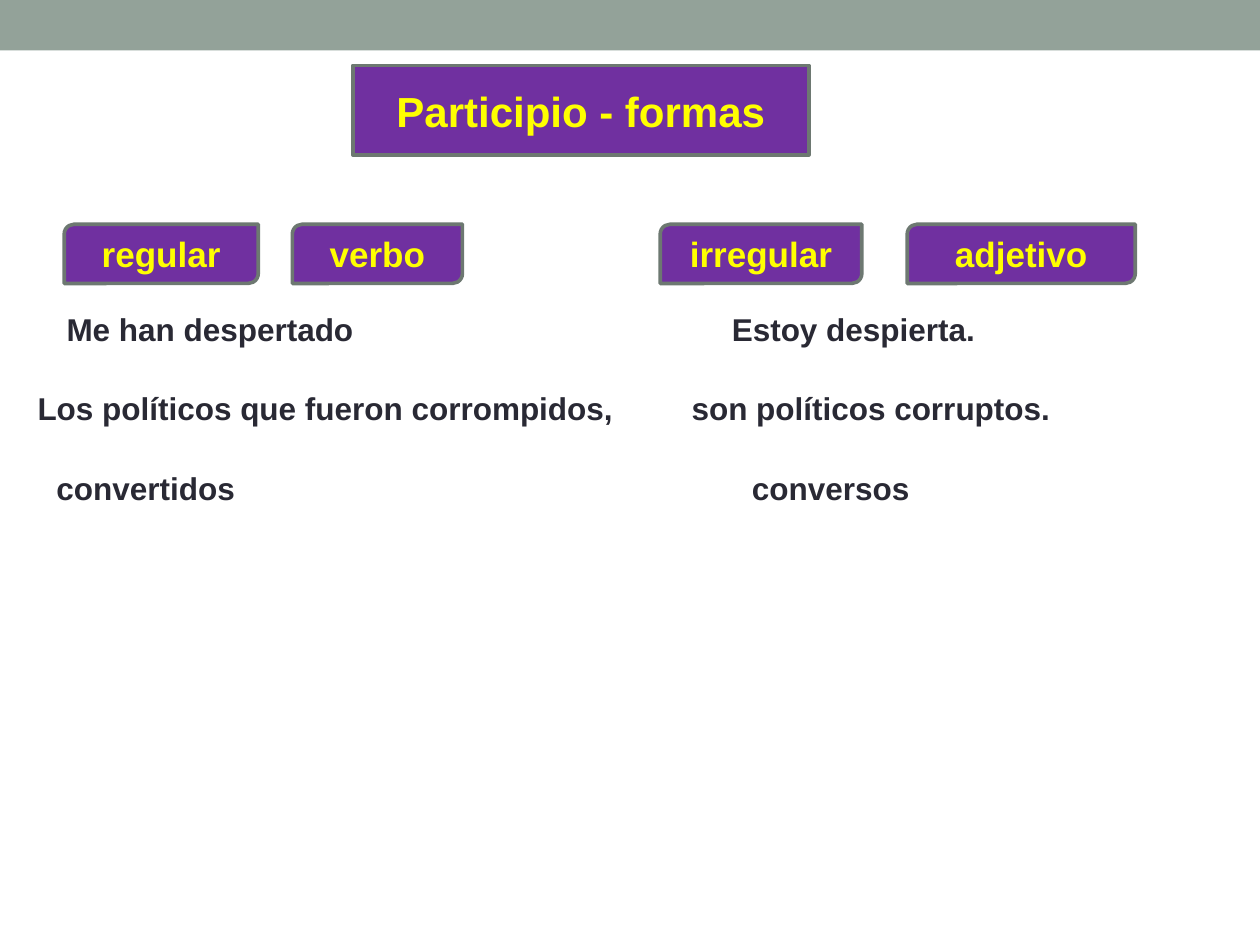
import pptx
import pptx.util
import pptx.dml.color
import pptx.enum.shapes
import pptx.enum.text
import pptx.oxml

THEME = {
    "font": "Arial",
    "band": "93A299", "label": "7030A0", "border": "6D7871",
    "label text": "FFFF00", "body text": "292934",
    "title size": 24, "label size": 20, "body size": 18, "border width": 2.08,
}
SHAPES = pptx.enum.shapes.MSO_SHAPE
ANCHORS = pptx.enum.text.MSO_ANCHOR

presentation = pptx.Presentation()
presentation.slide_width = pptx.util.Inches(10)
presentation.slide_height = pptx.util.Inches(7.5)
slide = presentation.slides.add_slide(presentation.slide_layouts[5])

# The grid has 100 columns and 75 rows.
column = presentation.slide_width // 100
row = presentation.slide_height // 75


def color(name):
    return pptx.dml.color.RGBColor.from_string(THEME[name])


def write(shape, text, kind, size, alignment, anchor):
    """Put one bold line of text in a shape, in the theme's style."""
    frame = shape.text_frame
    frame.text = text
    frame.word_wrap = True
    frame.auto_size = pptx.enum.text.MSO_AUTO_SIZE.NONE
    frame.vertical_anchor = anchor
    paragraph = frame.paragraphs[0]
    paragraph.alignment = alignment
    paragraph.font.name = THEME["font"]
    paragraph.font.size = pptx.util.Pt(THEME[size])
    paragraph.font.bold = True
    paragraph.font.color.rgb = color(kind)


# Band across the top
band = slide.shapes.add_shape(SHAPES.RECTANGLE, 0, 0, presentation.slide_width, 4 * row)
band.shadow.inherit = False
band.fill.solid()
band.fill.fore_color.rgb = color("band")
band.line.fill.background()

# Title placeholder, given the same outline as the labels
title = slide.shapes.title
title.left, title.top = int(28 * column), int(5.2 * row)
title.width, title.height = int(36.2 * column), int(7.1 * row)
title._element.spPr.append(pptx.oxml.parse_xml(
    '<a:prstGeom xmlns:a="http://schemas.openxmlformats.org/drawingml/2006/main"'
    ' prst="round2DiagRect"><a:avLst/></a:prstGeom>'))
labels = [(title, "Participio - formas", "title size")]

# Labels: left column, width in columns
label_top, label_height = 17.8, 4.7
for text, left, width in [
    ("regular", 5.1, 15.4),
    ("verbo", 23.2, 13.5),
    ("irregular", 52.4, 16),
    ("adjetivo", 72, 18.1),
]:
    label = slide.shapes.add_shape(
        SHAPES.ROUND_2_DIAG_RECTANGLE, int(left * column), int(label_top * row),
        int(width * column), int(label_height * row))
    labels.append((label, text, "label size"))

for label, text, size in labels:
    label.shadow.inherit = False
    label.fill.solid()
    label.fill.fore_color.rgb = color("label")
    label.line.color.rgb = color("border")
    label.line.width = pptx.util.Pt(THEME["border width"])
    write(label, text, "label text", size, pptx.enum.text.PP_ALIGN.CENTER, ANCHORS.MIDDLE)

# Examples: each line pairs a regular form with an irregular one
examples = [
    [("Me han despertado", 4.3, 25.6), ("Estoy despierta.", 57.1, 25.6)],
    [("Los políticos que fueron corrompidos,", 2, 50.4), ("son políticos corruptos.", 53.9, 42.9)],
    [("convertidos", 3.5, 25.6), ("conversos", 58.7, 25.6)],
]
first_line, line_step, line_height = 24.1, 6.3, 4
for index, pair in enumerate(examples):
    for text, left, width in pair:
        example = slide.shapes.add_textbox(
            int(left * column), int((first_line + index * line_step) * row),
            int(width * column), line_height * row)
        write(example, text, "body text", "body size", pptx.enum.text.PP_ALIGN.LEFT, ANCHORS.TOP)

presentation.save("out.pptx")
